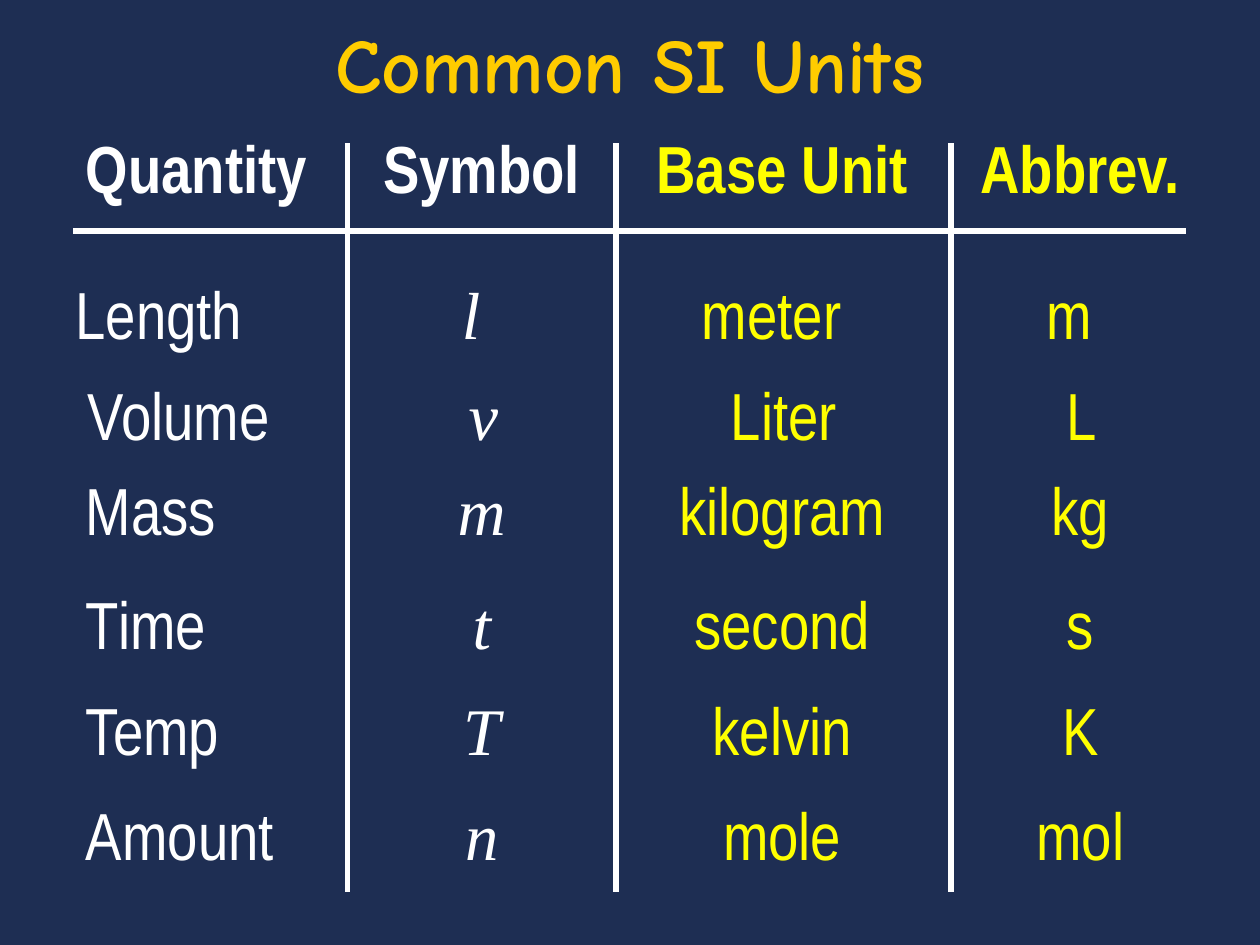
from lxml.etree import SubElement
from pptx import Presentation
from pptx.dml.color import RGBColor
from pptx.enum.shapes import MSO_CONNECTOR as Connector
from pptx.enum.text import MSO_ANCHOR as Anchor, MSO_AUTO_SIZE as AutoSize, PP_ALIGN as Align
from pptx.oxml.ns import qn
from pptx.util import Pt

NAVY, GOLD, WHITE, YELLOW = "1E2E53", "FFCC00", "FFFFFF", "FFFF00"
SANS, SERIF, DISPLAY = "Arial Narrow", "Times New Roman", "Comic Neue"

COLUMNS = [
    (42, 204, Align.LEFT, WHITE, SANS),
    (208.8, 133, Align.CENTER, WHITE, SERIF),
    (345, 204, Align.CENTER, YELLOW, SANS),
    (550.8, 133, Align.CENTER, YELLOW, SANS),
]
HEADINGS = ["Quantity", "Symbol", "Base Unit", "Abbrev."]
UNITS = [
    (152.6, -6, ["Length", "l", "meter", "m"]),
    (210.2, 1, ["Volume", "v", "Liter", "L"]),
    (264.2, 0, ["Mass", "m", "kilogram", "kg"]),
    (329.8, 0, ["Time", "t", "second", "s"]),
    (390.2, 0, ["Temp", "T", "kelvin", "K"]),
    (450, 0, ["Amount", "n", "mole", "mol"]),
]


def color(value):
    return RGBColor.from_string(value)


class UnitSlide:
    """Hold the style and the current slide, and draw its elements."""

    def __init__(self, deck):
        self.slide = deck.slides.add_slide(deck.slide_layouts[5])
        background = self.slide.background.fill
        background.solid()
        background.fore_color.rgb = color(NAVY)

    def style(self, paragraph, align, size, face, tint, bold=False, italic=False):
        paragraph.alignment = align
        font = paragraph.font
        font.size, font.name = Pt(size), face
        font.bold, font.italic = bold, italic
        font.color.rgb = color(tint)

    def title(self, wording):
        heading = self.slide.shapes.title
        heading.left, heading.top = Pt(54), Pt(0)
        heading.width, heading.height = Pt(612), Pt(66)
        frame = heading.text_frame
        frame.text = wording
        frame.vertical_anchor = Anchor.BOTTOM
        self.style(frame.paragraphs[0], Align.CENTER, 44, DISPLAY, GOLD, bold=True)

    def entry(self, wording, left, top, width, align, tint, face, bold=False):
        box = self.slide.shapes.add_textbox(Pt(left), Pt(top), Pt(width), Pt(52.6))
        frame = box.text_frame
        frame.word_wrap = True
        frame.auto_size = AutoSize.SHAPE_TO_FIT_TEXT
        frame.text = wording
        self.style(frame.paragraphs[0], align, 38, face, tint, bold, face == SERIF)

    def row(self, wordings, top, shift=0, heading=False):
        for wording, (left, width, align, tint, face) in zip(wordings, COLUMNS):
            self.entry(wording, left + shift, top, width, align, tint,
                       SANS if heading else face, heading)

    def rule(self, *ends):
        line = self.slide.shapes.add_connector(Connector.STRAIGHT, *map(Pt, ends))
        line.line.color.rgb = color(WHITE)
        line.line.width = Pt(3)
        SubElement(line._element.spPr, qn("a:effectLst"))


def main():
    deck = Presentation()
    deck.slide_width, deck.slide_height = Pt(720), Pt(540)
    page = UnitSlide(deck)
    page.title("Common SI Units")
    page.rule(42, 132, 678, 132)
    for divider in (198.6, 352, 543.4):
        page.rule(divider, 82, divider, 510)
    page.row(HEADINGS, 69, heading=True)
    for top, shift, wordings in UNITS:
        page.row(wordings, top, shift)
    deck.save("out.pptx")


if __name__ == "__main__":
    main()
